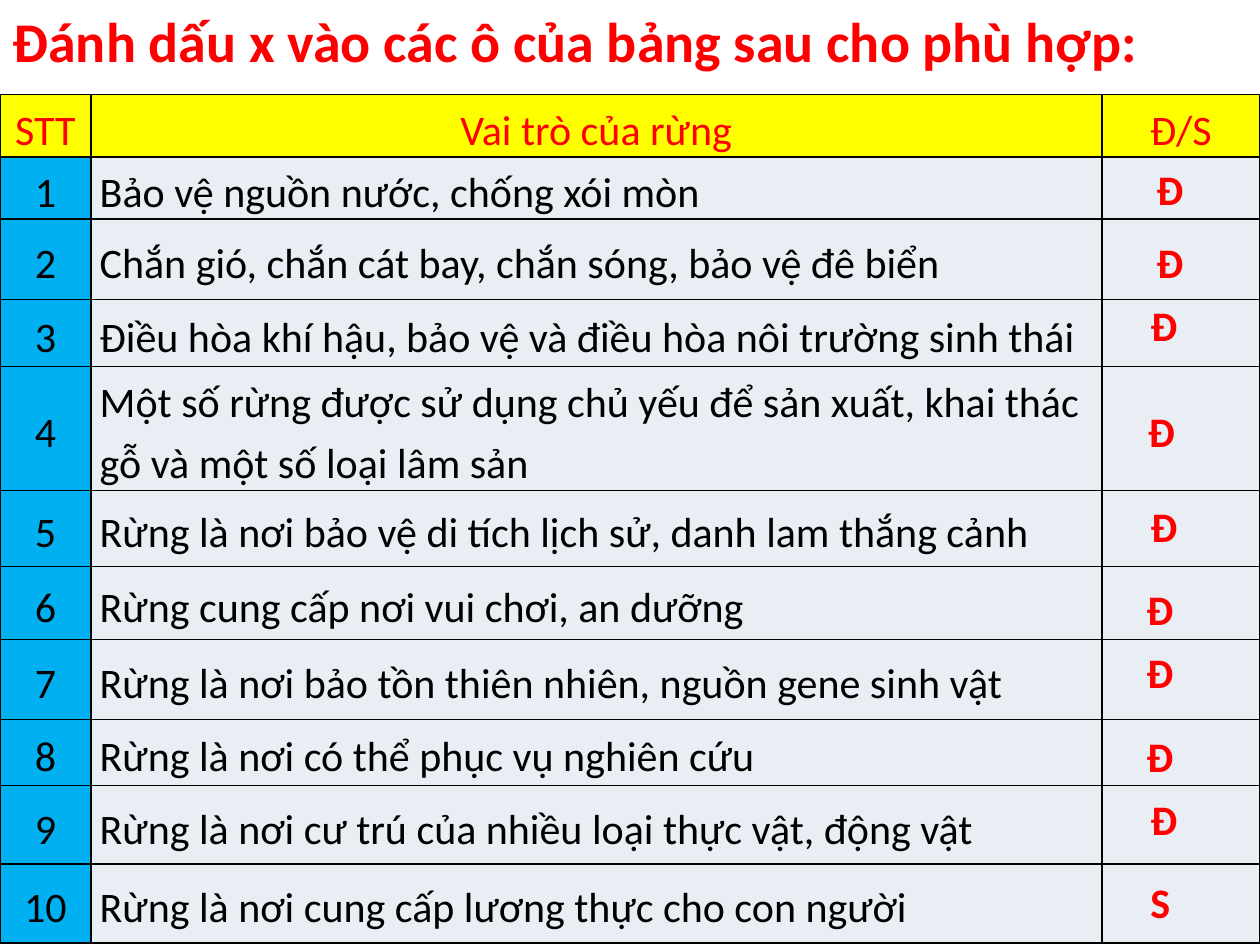
from lxml import etree
from pptx import Presentation
from pptx.dml.color import RGBColor
from pptx.enum.text import MSO_ANCHOR, MSO_AUTO_SIZE, PP_ALIGN
from pptx.oxml.ns import qn
from pptx.util import Cm, Pt

LEFT, CENTER = PP_ALIGN.LEFT, PP_ALIGN.CENTER
TOP, MIDDLE = MSO_ANCHOR.TOP, MSO_ANCHOR.MIDDLE
NO_FIT = MSO_AUTO_SIZE.NONE
RED = RGBColor(0xFF, 0x00, 0x00)
BLACK = RGBColor(0x00, 0x00, 0x00)
YELLOW = RGBColor(0xFF, 0xFF, 0x00)
BLUE = RGBColor(0x00, 0xB0, 0xF0)
PALE = RGBColor(0xE9, 0xED, 0xF4)

HEADERS = ["STT", "Vai trò của rừng", "Đ/S"]
ROLES = [
    "Bảo vệ nguồn nước, chống xói mòn",
    "Chắn gió, chắn cát bay, chắn sóng, bảo vệ đê biển",
    "Điều hòa khí hậu, bảo vệ và điều hòa nôi trường sinh thái",
    "Một số rừng được sử dụng chủ yếu để sản xuất, khai thác gỗ và một số loại lâm sản",
    "Rừng là nơi bảo vệ di tích lịch sử, danh lam thắng cảnh",
    "Rừng cung cấp nơi vui chơi, an dưỡng",
    "Rừng là nơi bảo tồn thiên nhiên, nguồn gene sinh vật",
    "Rừng là nơi có thể phục vụ nghiên cứu",
    "Rừng là nơi cư trú của nhiều loại thực vật, động vật",
    "Rừng là nơi cung cấp lương thực cho con người",
]
COL_WIDTHS = [1.83, 20.38, 3.19]
ROW_HEIGHTS = [1.25, 1.25, 1.63, 1.35, 2.5, 1.53, 1.47, 1.61, 1.33, 1.59, 1.59]
ANSWERS = [
    ("Đ", 23.06, 3.18), ("Đ", 23.06, 4.65), ("Đ", 22.94, 5.92),
    ("Đ", 22.89, 8.05), ("Đ", 22.94, 9.96), ("Đ", 22.86, 11.63),
    ("Đ", 22.86, 12.9), ("Đ", 22.86, 14.6), ("Đ", 22.94, 15.88),
    ("S", 22.94, 17.55),
]


def write(tf, text, size, color, bold=False, align=LEFT):
    p = tf.paragraphs[0]
    p.alignment = align
    r = p.add_run()
    r.text = text
    r.font.name = "Calibri"
    r.font.size = Pt(size)
    r.font.bold = bold
    r.font.color.rgb = color
    return p


def add_borders(cell):
    tc_pr = cell._tc.get_or_add_tcPr()
    for side in ("a:lnL", "a:lnR", "a:lnT", "a:lnB"):
        ln = etree.SubElement(tc_pr, qn(side), w=str(Pt(1)))
        fill = etree.SubElement(ln, qn("a:solidFill"))
        etree.SubElement(fill, qn("a:srgbClr"), val=str(BLACK))


prs = Presentation()
prs.slide_width, prs.slide_height = Cm(25.4), Cm(19.05)
s = prs.slides.add_slide(prs.slide_layouts[5])

title = s.shapes.title
title.left, title.top, title.width, title.height = Cm(0), Cm(0), Cm(25.4), Cm(1.63)
tf = title.text_frame
tf.word_wrap = True
tf.auto_size = NO_FIT
tf.vertical_anchor = TOP
write(tf, "Đánh dấu x vào các ô của bảng sau cho phù hợp:", 32, RED, bold=True)

table = s.shapes.add_table(
    len(ROW_HEIGHTS), len(COL_WIDTHS),
    Cm(0), Cm(1.91), Cm(sum(COL_WIDTHS)), Cm(sum(ROW_HEIGHTS)),
).table
for column, width in zip(table.columns, COL_WIDTHS):
    column.width = Cm(width)
for row, height in zip(table.rows, ROW_HEIGHTS):
    row.height = Cm(height)

rows = [HEADERS] + [[str(n), role, ""] for n, role in enumerate(ROLES, 1)]
for i, texts in enumerate(rows):
    for j, text in enumerate(texts):
        cell = table.cell(i, j)
        cell.vertical_anchor = MIDDLE
        cell.margin_left = cell.margin_right = Cm(0.18)
        cell.margin_top = cell.margin_bottom = Cm(0)
        add_borders(cell)
        cell.fill.solid()
        cell.fill.fore_color.rgb = YELLOW if i == 0 else BLUE if j == 0 else PALE
        if text:
            align = LEFT if i and j else CENTER
            p = write(cell.text_frame, text, 24, BLACK if i else RED, align=align)
            p.line_spacing = 1.2

for answer, left, top in ANSWERS:
    box = s.shapes.add_textbox(Cm(left), Cm(top), Cm(1.48), Cm(1.28))
    box.text_frame.word_wrap = True
    write(box.text_frame, answer, 24, RED, bold=True)

prs.save("out.pptx")
